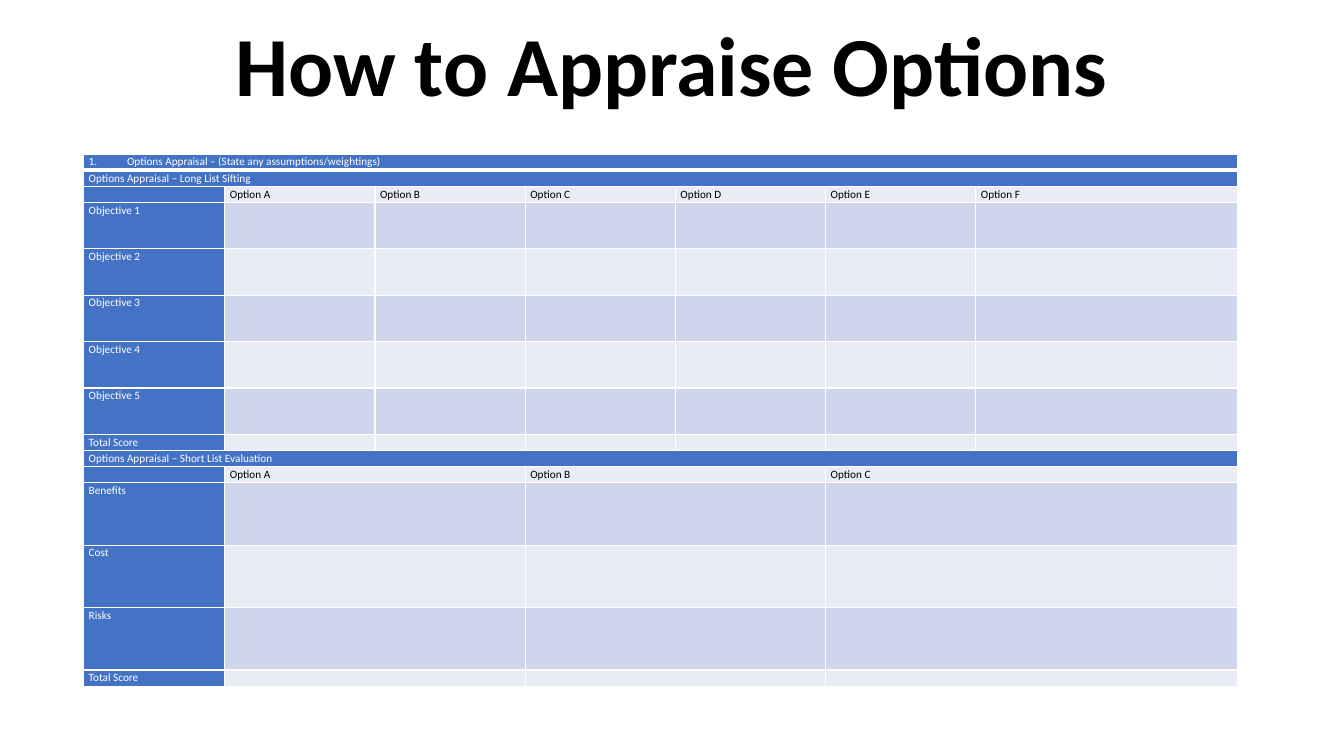
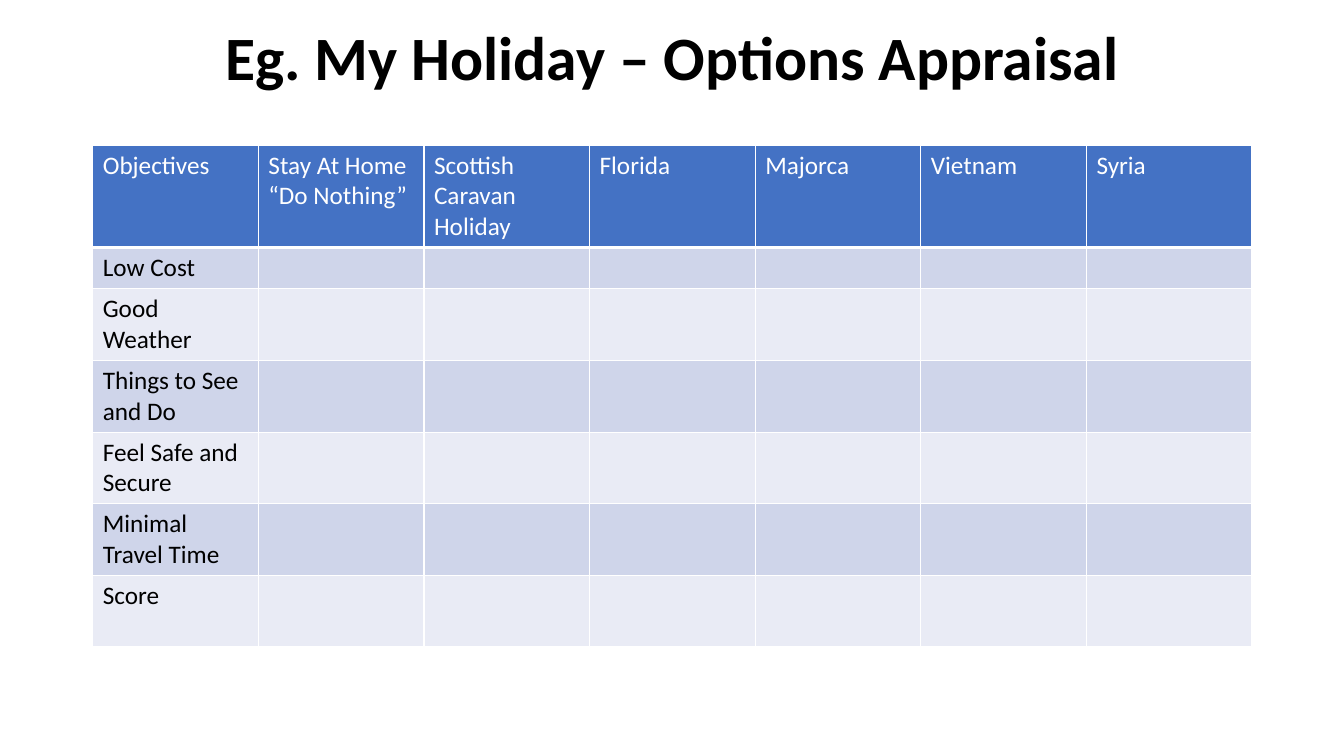
import pptx
import pptx.dml.color
import pptx.enum.text
import pptx.oxml.ns
import pptx.util
from dataclasses import dataclass
from lxml import etree

Inches, Pt = pptx.util.Inches, pptx.util.Pt
qn = pptx.oxml.ns.qn


@dataclass(frozen=True)
class Theme:
    font: str = "Calibri"
    ink: str = "000000"
    paper: str = "FFFFFF"
    accent: str = "4472C4"
    light: str = "E9EBF5"
    dark: str = "CFD5EA"
    form_size: int = 8
    table_size: int = 18
    thin: int = 1
    thick: int = 3


THEME = Theme()

# Content: a section is a heading, its options, its criteria and their row height
FORM_TITLE = "How to Appraise Options"
FORM_HEADING = "Options Appraisal – (State any assumptions/weightings)"
SECTIONS = [
    ("Options Appraisal – Long List Sifting",
     [f"Option {letter}" for letter in "ABCDEF"],
     [f"Objective {number}" for number in range(1, 6)], 0.46),
    ("Options Appraisal – Short List Evaluation",
     [f"Option {letter}" for letter in "ABC"],
     ["Benefits", "Cost", "Risks"], 0.62),
]
TOTAL = "Total Score"
FORM_COLUMNS = [1.4] + [1.49] * 5 + [2.6]
FORM_LINE = 0.16

HOLIDAY_TITLE = "Eg. My Holiday – Options Appraisal"
HOLIDAY_HEADERS = ["Objectives", "Stay At Home “Do Nothing”",
                   "Scottish Caravan Holiday", "Florida", "Majorca",
                   "Vietnam", "Syria"]
HOLIDAY_ROWS = [("Low Cost", 0.41), ("Good Weather", 0.71),
                ("Things to See and Do", 0.71),
                ("Feel Safe and Secure", 0.71),
                ("Minimal Travel Time", 0.71), ("Score", 0.71)]
HOLIDAY_HEADER_HEIGHT = 1.01
HOLIDAY_WIDTH = 11.5


def write(frame, text, size, color=THEME.ink, bold=False, align=None,
          spacing=None):
    """Fill the first paragraph of a text frame; empty text keeps its size."""
    para = frame.paragraphs[0]
    para.alignment = align
    para.line_spacing = spacing
    if not text:
        etree.SubElement(para._p, qn("a:endParaRPr"), sz=str(size * 100))
        return para
    span = para.add_run()
    span.text = text
    span.font.name = THEME.font
    span.font.size = Pt(size)
    span.font.bold = bold
    span.font.color.rgb = pptx.dml.color.RGBColor.from_string(color)
    return para


def add_page(deck, title, box, size):
    page = deck.slides.add_slide(deck.slide_layouts.get_by_name("Title Only"))
    shape = page.shapes.title
    shape.left, shape.top, shape.width, shape.height = map(Inches, box)
    frame = shape.text_frame
    frame.auto_size = pptx.enum.text.MSO_AUTO_SIZE.NONE
    frame.vertical_anchor = pptx.enum.text.MSO_ANCHOR.MIDDLE
    write(frame, title, size, bold=True, spacing=0.9,
          align=pptx.enum.text.PP_ALIGN.CENTER)
    return page


def add_grid(page, left, top, columns, rows):
    table = page.shapes.add_table(
        len(rows), len(columns), Inches(left), Inches(top),
        Inches(sum(columns)), Inches(sum(rows))).table
    table.first_row = table.horz_banding = False
    for column, width in zip(table.columns, columns):
        column.width = Inches(width)
    for row, height in zip(table.rows, rows):
        row.height = Inches(height)
    return table


def style_cell(cell, text, fill, size, header=False, **text_format):
    cell.fill.solid()
    cell.fill.fore_color.rgb = pptx.dml.color.RGBColor.from_string(fill)
    properties = cell._tc.get_or_add_tcPr()
    for index, side in enumerate("LRTB"):
        points = THEME.thick if header and side == "B" else THEME.thin
        line = etree.Element(qn(f"a:ln{side}"), w=str(Pt(points)))
        paint = etree.SubElement(line, qn("a:solidFill"))
        etree.SubElement(paint, qn("a:srgbClr"), val=THEME.paper)
        properties.insert(index, line)
    color = THEME.paper if fill == THEME.accent else THEME.ink
    return write(cell.text_frame, text, size, color, **text_format)


def number_paragraph(para, indent):
    properties = para._p.get_or_add_pPr()
    properties.set("marL", str(Inches(indent)))
    properties.set("indent", str(-Inches(indent)))
    etree.SubElement(properties, qn("a:buFont"), typeface="+mj-lt")
    etree.SubElement(properties, qn("a:buAutoNum"), type="arabicPeriod")


def band(index):
    return THEME.dark if index % 2 else THEME.light


def build_form(deck):
    page = add_page(deck, FORM_TITLE, (0.21, 0.06, 12.9, 1.25), 60)

    # Each line: height, texts, fill beside the label
    lines = [(FORM_LINE, [FORM_HEADING], None)]
    for heading, options, criteria, height in SECTIONS:
        blanks = [""] * len(options)
        lines.append((FORM_LINE, [heading], None))
        body = [(FORM_LINE, ["", *options])]
        body += [(height, [name, *blanks]) for name in criteria]
        body.append((FORM_LINE, [TOTAL, *blanks]))
        lines += [(tall, texts, band(index))
                  for index, (tall, texts) in enumerate(body)]

    table = add_grid(page, 0.83, 1.53, FORM_COLUMNS,
                     [line[0] for line in lines])
    last = len(FORM_COLUMNS) - 1
    for row, (_, texts, fill) in enumerate(lines):
        # Options share the columns right of the label equally
        step = last // max(len(texts) - 1, 1)
        for column in range(last + 1):
            group, offset = divmod(column - 1, step)
            is_label = column == 0
            starts = is_label or (fill and offset == 0)
            text = texts[0 if is_label else group + 1] if starts else ""
            cell = table.cell(row, column)
            cell.margin_left = cell.margin_right = Inches(0.05)
            cell.margin_top = cell.margin_bottom = 0
            para = style_cell(
                cell, text, THEME.accent if is_label or not fill else fill,
                THEME.form_size, header=row == 0, spacing=1.07)
            if row == 0 and is_label:
                number_paragraph(para, 0.38)
        if not fill:
            table.cell(row, 0).merge(table.cell(row, last))
        elif step > 1:
            for start in range(1, last, step):
                table.cell(row, start).merge(table.cell(row, start + step - 1))


def build_holiday(deck):
    page = add_page(deck, HOLIDAY_TITLE, (0.92, -0.12, 11.5, 1.45), 44)
    count = len(HOLIDAY_HEADERS)
    heights = [HOLIDAY_HEADER_HEIGHT] + [height for _, height in HOLIDAY_ROWS]
    table = add_grid(page, 0.92, 1.44, [HOLIDAY_WIDTH / count] * count, heights)
    grid = [HOLIDAY_HEADERS]
    grid += [[name] + [""] * (count - 1) for name, _ in HOLIDAY_ROWS]
    for row, texts in enumerate(grid):
        for column, text in enumerate(texts):
            style_cell(table.cell(row, column), text,
                       band(row) if row else THEME.accent,
                       THEME.table_size, header=row == 0)


def main():
    deck = pptx.Presentation()
    deck.slide_width, deck.slide_height = Inches(13.33), Inches(7.5)
    build_form(deck)
    build_holiday(deck)
    deck.save("out.pptx")


if __name__ == "__main__":
    main()
